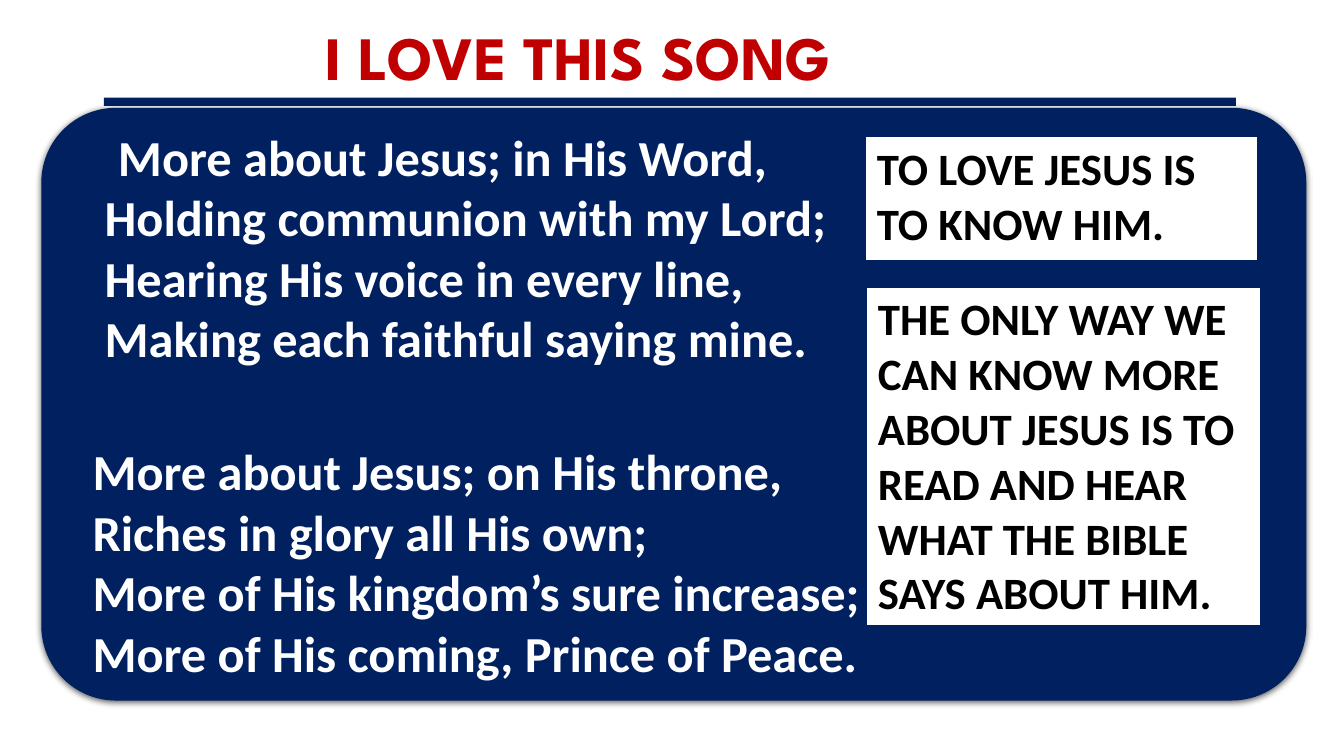
from lxml.etree import SubElement
from pptx import Presentation
from pptx.dml.color import RGBColor
from pptx.enum.shapes import MSO_SHAPE
from pptx.enum.text import MSO_ANCHOR, MSO_AUTO_SIZE, PP_ALIGN
from pptx.oxml.ns import qn
from pptx.util import Pt

NAVY = RGBColor(0x00, 0x20, 0x60)
RED = RGBColor(0xC0, 0x00, 0x00)
WHITE = RGBColor(0xFF, 0xFF, 0xFF)
BLACK = RGBColor(0x00, 0x00, 0x00)

VERSE_WORD = """More about Jesus; in His Word,
Holding communion with my Lord;
Hearing His voice in every line,
Making each faithful saying mine."""
VERSE_THRONE = """More about Jesus; on His throne,
Riches in glory all His own;
More of His kingdom’s sure increase;
More of His coming, Prince of Peace."""
NOTE_LOVE = "TO LOVE JESUS IS TO KNOW HIM."
NOTE_BIBLE = ("THE ONLY WAY WE CAN KNOW MORE ABOUT JESUS IS TO READ AND HEAR "
              "WHAT THE BIBLE SAYS ABOUT HIM.")


def style(p, size, color, name="Calibri"):
    p.font.size = Pt(size)
    p.font.name = name
    p.font.bold = True
    p.font.color.rgb = color


def add_block(slide, kind, x, y, w, h):
    """Add a plain navy shape without outline or shadow."""
    sp = slide.shapes.add_shape(kind, Pt(x), Pt(y), Pt(w), Pt(h))
    sp.fill.solid()
    sp.fill.fore_color.rgb = NAVY
    sp.line.fill.background()
    sp.shadow.inherit = False
    return sp


def add_soft_shadow(sp):
    effects = sp.element.spPr.find(qn("a:effectLst"))
    shadow = SubElement(effects, qn("a:outerShdw"), blurRad=str(Pt(4.5)),
                        dist=str(Pt(1.5)), dir="5400000", rotWithShape="0")
    color = SubElement(shadow, qn("a:srgbClr"), val=str(BLACK))
    SubElement(color, qn("a:alpha"), val="63000")


def add_title(slide, x, y, w, h):
    title = slide.shapes.title
    title.left, title.top, title.width, title.height = Pt(x), Pt(y), Pt(w), Pt(h)
    tf = title.text_frame
    tf.word_wrap = False
    tf.auto_size = MSO_AUTO_SIZE.SHAPE_TO_FIT_TEXT
    tf.vertical_anchor = MSO_ANCHOR.TOP
    p = tf.paragraphs[0]
    p.text = "I LOVE THIS SONG"
    p.alignment = PP_ALIGN.CENTER
    style(p, 44, RED, "League Spartan")


def add_verse(slide, text, x, y, w, h, first_indent=0):
    tf = slide.shapes.add_textbox(Pt(x), Pt(y), Pt(w), Pt(h)).text_frame
    tf.word_wrap = True
    tf.auto_size = MSO_AUTO_SIZE.SHAPE_TO_FIT_TEXT
    p = tf.paragraphs[0]
    p.text = text
    style(p, 36, WHITE)
    if first_indent:
        p._p.get_or_add_pPr().set("indent", str(Pt(first_indent)))


def add_note(slide, text, x, y, w, h):
    """Add a one-cell white table holding a remark."""
    table = slide.shapes.add_table(1, 1, Pt(x), Pt(y), Pt(w), Pt(h)).table
    table.first_row = False
    table.horz_banding = False
    cell = table.cell(0, 0)
    cell.fill.solid()
    cell.fill.fore_color.rgb = WHITE
    cell.vertical_anchor = MSO_ANCHOR.MIDDLE
    cell.margin_left = cell.margin_right = Pt(7.2)
    cell.margin_top, cell.margin_bottom = Pt(3.6), Pt(5.4)
    p = cell.text_frame.paragraphs[0]
    p.text = text
    style(p, 32, BLACK)


def add_song_panel(slide, x, y, w, h):
    panel = add_block(slide, MSO_SHAPE.ROUNDED_RECTANGLE, x, y, w, h)
    panel.adjustments[0] = 0.126
    add_soft_shadow(panel)
    add_verse(slide, VERSE_WORD, x + 38.2, y + 9.4, 550, 181.4, first_indent=9.5)
    add_verse(slide, VERSE_THRONE, x + 29.5, y + 234, 566, 181.4)
    add_note(slide, NOTE_LOVE, x + 589.7, y + 21.6, 278.6, 86.4)
    add_note(slide, NOTE_BIBLE, x + 590.4, y + 128.9, 280, 239.8)


def main():
    prs = Presentation()
    prs.slide_width, prs.slide_height = Pt(960), Pt(540)
    slide = prs.slides.add_slide(prs.slide_layouts[5])
    add_title(slide, 218.2, 10.1, 390.2, 60.5)
    add_block(slide, MSO_SHAPE.RECTANGLE, 74.2, 69.8, 808.6, 5.8)
    add_song_panel(slide, 29.5, 77, 903.6, 423.4)
    prs.save("out.pptx")


if __name__ == "__main__":
    main()
